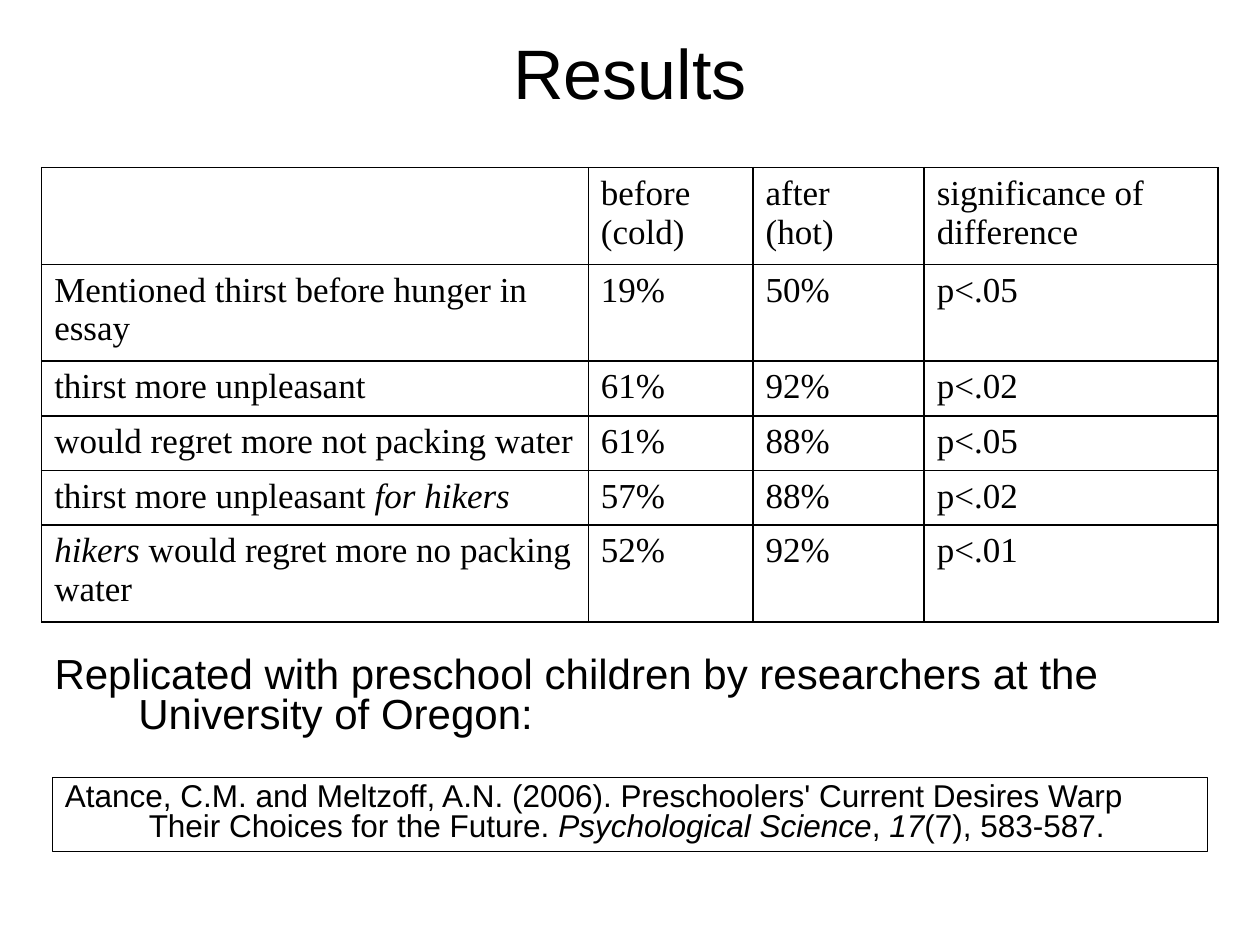
from pptx import Presentation
from pptx.dml.color import RGBColor
from pptx.enum.shapes import MSO_SHAPE
from pptx.enum.text import MSO_ANCHOR, PP_ALIGN
from pptx.oxml import parse_xml
from pptx.oxml.ns import nsdecls
from pptx.util import Cm, Pt

COLORS = {"ink": "000000", "paper": "FFFFFF"}
INK = RGBColor.from_string(COLORS["ink"])
PAPER = RGBColor.from_string(COLORS["paper"])


def write(frame, text, size, face, hanging=False):
    """Fill a frame; newlines split paragraphs, asterisks enclose italics."""
    frame.word_wrap = True
    for number, line in enumerate(text.split("\n")):
        par = frame.add_paragraph() if number else frame.paragraphs[0]
        par.alignment = PP_ALIGN.LEFT
        if hanging:
            par.line_spacing = 0.8
            props = par._p.get_or_add_pPr()
            props.set("marL", str(Cm(1.69)))
            props.set("indent", str(-Cm(1.69)))
        par.font.size = Pt(size)
        par.font.name = face
        par.font.color.rgb = INK
        for part, words in enumerate(line.split("*")):
            if words:
                run = par.add_run()
                run.text = words
                if part % 2:
                    run.font.italic = True


def add_borders(cell):
    props = cell._tc.get_or_add_tcPr()
    for position, side in enumerate(("lnL", "lnR", "lnT", "lnB")):
        props.insert(position, parse_xml(
            f'<a:{side} {nsdecls("a")} w="{Pt(1)}"><a:solidFill>'
            f'<a:srgbClr val="{COLORS["ink"]}"/></a:solidFill></a:{side}>'))


prs = Presentation()
prs.slide_width, prs.slide_height = Cm(25.4), Cm(19.05)
slide = prs.slides.add_slide(prs.slide_layouts[6])

# Title
title = slide.shapes.add_textbox(Cm(1.27), Cm(0.76), Cm(22.86), Cm(1.35)).text_frame
title.vertical_anchor = MSO_ANCHOR.MIDDLE
write(title, "Results", 40, "Arial")
title.paragraphs[0].alignment = PP_ALIGN.CENTER

# Results table; the first column just holds its longest one-line label
results = [
    ("", "before\n(cold)", "after\n(hot)", "significance of difference"),
    ("Mentioned thirst before hunger in essay", "19%", "50%", "p<.05"),
    ("thirst more unpleasant", "61%", "92%", "p<.02"),
    ("would regret more not packing water", "61%", "88%", "p<.05"),
    ("thirst more unpleasant *for hikers*", "57%", "88%", "p<.02"),
    ("*hikers* would regret more no packing water", "52%", "92%", "p<.01"),
]
table = slide.shapes.add_table(
    len(results), len(results[0]), Cm(0.84), Cm(3.38), Cm(23.71), Cm(9.14)).table
table.first_row = table.horz_banding = False
for column, width in zip(table.columns, (11.02, 3.32, 3.45, 5.92)):
    column.width = Cm(width)
for row, height, values in zip(table.rows, (1.95, 1.95, 1.1, 1.1, 1.1, 1.94), results):
    row.height = Cm(height)
    for cell, value in zip(row.cells, values):
        cell.fill.solid()
        cell.fill.fore_color.rgb = PAPER
        add_borders(cell)
        write(cell.text_frame, value, 20, "Times New Roman")

# Replication note
replication = slide.shapes.add_textbox(Cm(0.85), Cm(13.12), Cm(23.7), Cm(1.88))
write(replication.text_frame,
      "Replicated with preschool children by researchers at the University of Oregon:",
      24, "Arial", hanging=True)

# Framed citation
citation = slide.shapes.add_shape(
    MSO_SHAPE.RECTANGLE, Cm(1.06), Cm(15.67), Cm(23.28), Cm(1.5))
citation.shadow.inherit = False
citation.fill.background()
citation.line.color.rgb = INK
citation.line.width = Pt(0.75)
citation.text_frame.vertical_anchor = MSO_ANCHOR.TOP
write(citation.text_frame,
      "Atance, C.M. and Meltzoff, A.N. (2006). Preschoolers' Current Desires Warp "
      "Their Choices for the Future. *Psychological Science*, *17*(7), 583-587.",
      18, "Arial", hanging=True)

prs.save("out.pptx")
